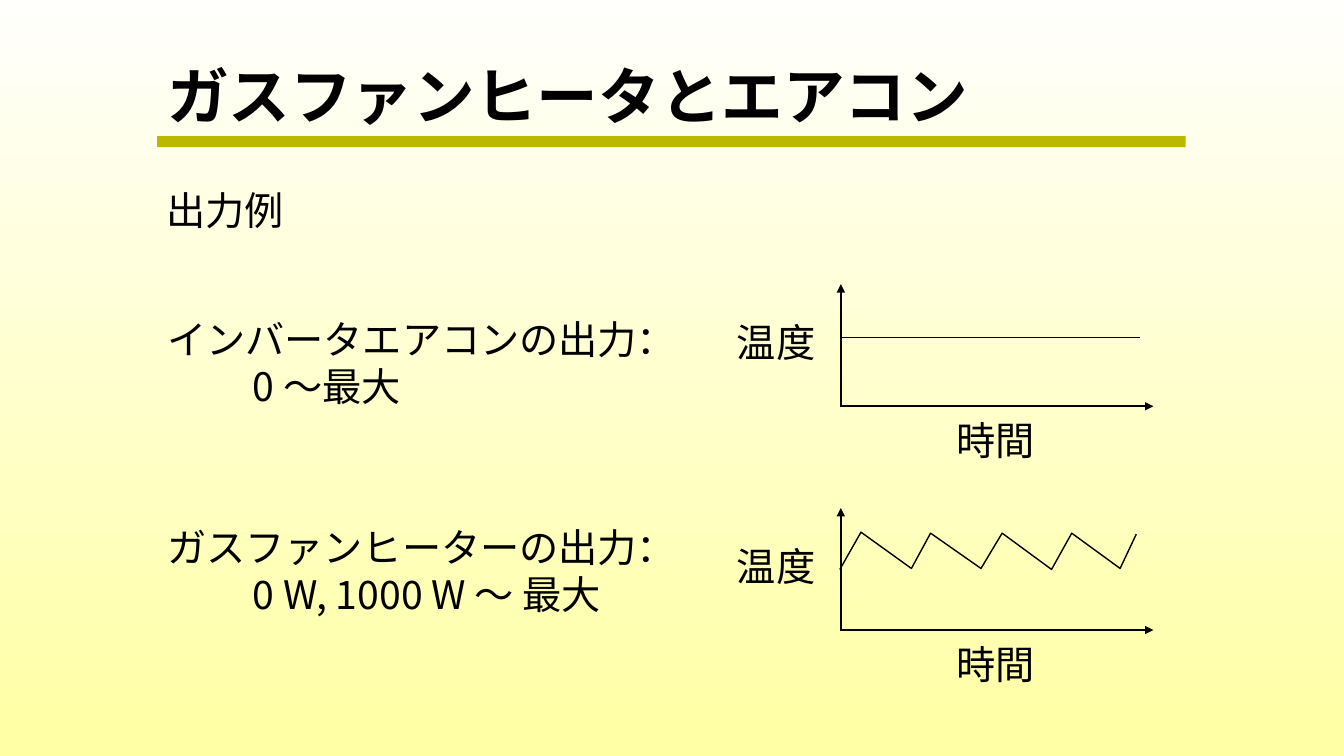
from lxml import etree
from pptx import Presentation
from pptx.dml.color import RGBColor
from pptx.enum.shapes import MSO_CONNECTOR, MSO_SHAPE
from pptx.enum.text import MSO_ANCHOR
from pptx.oxml.ns import qn
from pptx.util import Inches, Pt

RECT = MSO_SHAPE.RECTANGLE
STRAIGHT = MSO_CONNECTOR.STRAIGHT
TOP, MIDDLE = MSO_ANCHOR.TOP, MSO_ANCHOR.MIDDLE
JP_FONT = "Noto Sans CJK JP"
BLACK = "000000"

AXIS_X = 8.34
INVERTER_Y, HEATER_Y = 4.03, 6.25
HEATER_WAVE = [(8.33, 5.65), (8.54, 5.28), (9.04, 5.64), (9.23, 5.29),
               (9.73, 5.64), (9.94, 5.29), (10.43, 5.65), (10.63, 5.29),
               (11.11, 5.64), (11.27, 5.3)]


def color(hex_text):
    return RGBColor.from_string(hex_text)


def set_background(s, top, bottom):
    fill = s.background.fill
    fill.gradient()
    fill.gradient_angle = 270
    for stop, hex_text in zip(fill.gradient_stops, (top, bottom)):
        stop.color.rgb = color(hex_text)


def style_paragraph(p, size, font, bold, spacing):
    p.line_spacing = spacing
    p.font.name = font
    p.font.size = Pt(size)
    p.font.bold = bold
    p.font.color.rgb = color(BLACK)
    # East Asian typeface
    r_pr = p.font._element if hasattr(p.font, "_element") else p.font._rPr
    etree.SubElement(r_pr, qn("a:ea"), typeface=JP_FONT)


def add_text(s, x, y, w, h, lines, size=28, font=JP_FONT, bold=False,
             spacing=1.0, anchor=TOP, wrap=True):
    tf = s.shapes.add_textbox(Inches(x), Inches(y), Inches(w), Inches(h)).text_frame
    tf.word_wrap = wrap
    tf.vertical_anchor = anchor
    for i, line in enumerate(lines):
        p = tf.paragraphs[0] if i == 0 else tf.add_paragraph()
        p.text = line
        style_paragraph(p, size, font, bold, spacing)
    return tf


def add_line(s, x1, y1, x2, y2, width, arrow=False):
    line = s.shapes.add_connector(STRAIGHT, Inches(x1), Inches(y1),
                                  Inches(x2), Inches(y2))
    line.line.color.rgb = color(BLACK)
    line.line.width = Pt(width)
    if arrow:
        etree.SubElement(line.line._get_or_add_ln(), qn("a:tailEnd"), type="triangle")
    etree.SubElement(line._element.spPr, qn("a:effectLst"))


def add_axes(s, base_y):
    """Draw labelled temperature and time axes on the given base line."""
    add_text(s, 7.21, base_y - 0.92, 0.99, 0.63, ["温度"], wrap=False)
    add_line(s, AXIS_X, base_y, AXIS_X, base_y - 1.21, 1.5, arrow=True)
    add_line(s, AXIS_X - 0.01, base_y, 11.44, base_y, 1.5, arrow=True)
    add_text(s, 9.39, base_y + 0.05, 0.99, 0.63, ["時間"], wrap=False)


def add_curve(s, points, width):
    points = [(Inches(x), Inches(y)) for x, y in points]
    builder = s.shapes.build_freeform(*points[0])
    builder.add_line_segments(points[1:], close=False)
    sp = builder.convert_to_shape()
    sp.shadow.inherit = False
    sp.fill.background()
    sp.line.color.rgb = color(BLACK)
    sp.line.width = Pt(width)


def add_bar(s, x, y, w, h, hex_text):
    sp = s.shapes.add_shape(RECT, Inches(x), Inches(y), Inches(w), Inches(h))
    sp.shadow.inherit = False
    sp.fill.solid()
    sp.fill.fore_color.rgb = color(hex_text)
    sp.line.fill.background()


def main():
    prs = Presentation()
    prs.slide_width, prs.slide_height = Inches(13.33), Inches(7.5)
    s = prs.slides.add_slide(prs.slide_layouts[6])
    set_background(s, "FFFFFB", "FFFFA3")

    # Title and rule
    add_bar(s, 1.56, 1.35, 10.2, 0.11, "BCB800")
    add_text(s, 1.56, 0.51, 10.2, 0.95, ["ガスファンヒータとエアコン"], size=44,
             font="Arial", bold=True, spacing=0.9, anchor=MIDDLE)

    # Output descriptions
    add_text(s, 1.55, 1.8, 1.38, 0.63, ["出力例"], wrap=False)
    tf = add_text(s, 1.56, 3.08, 6.14, 3.46, [
        "インバータエアコンの出力：", "0 ～最大",
        "ガスファンヒーターの出力：", "0 W, 1000 W ～ 最大"])
    for p in tf.paragraphs[1::2]:
        p._p.get_or_add_pPr().set("marL", str(Inches(0.85)))
    tf.paragraphs[2].space_before = Pt(81)

    # Temperature graphs
    add_axes(s, INVERTER_Y)
    add_line(s, AXIS_X, 3.35, 11.31, 3.35, 1)
    add_axes(s, HEATER_Y)
    add_curve(s, HEATER_WAVE, 1)

    prs.save("out.pptx")


if __name__ == "__main__":
    main()
